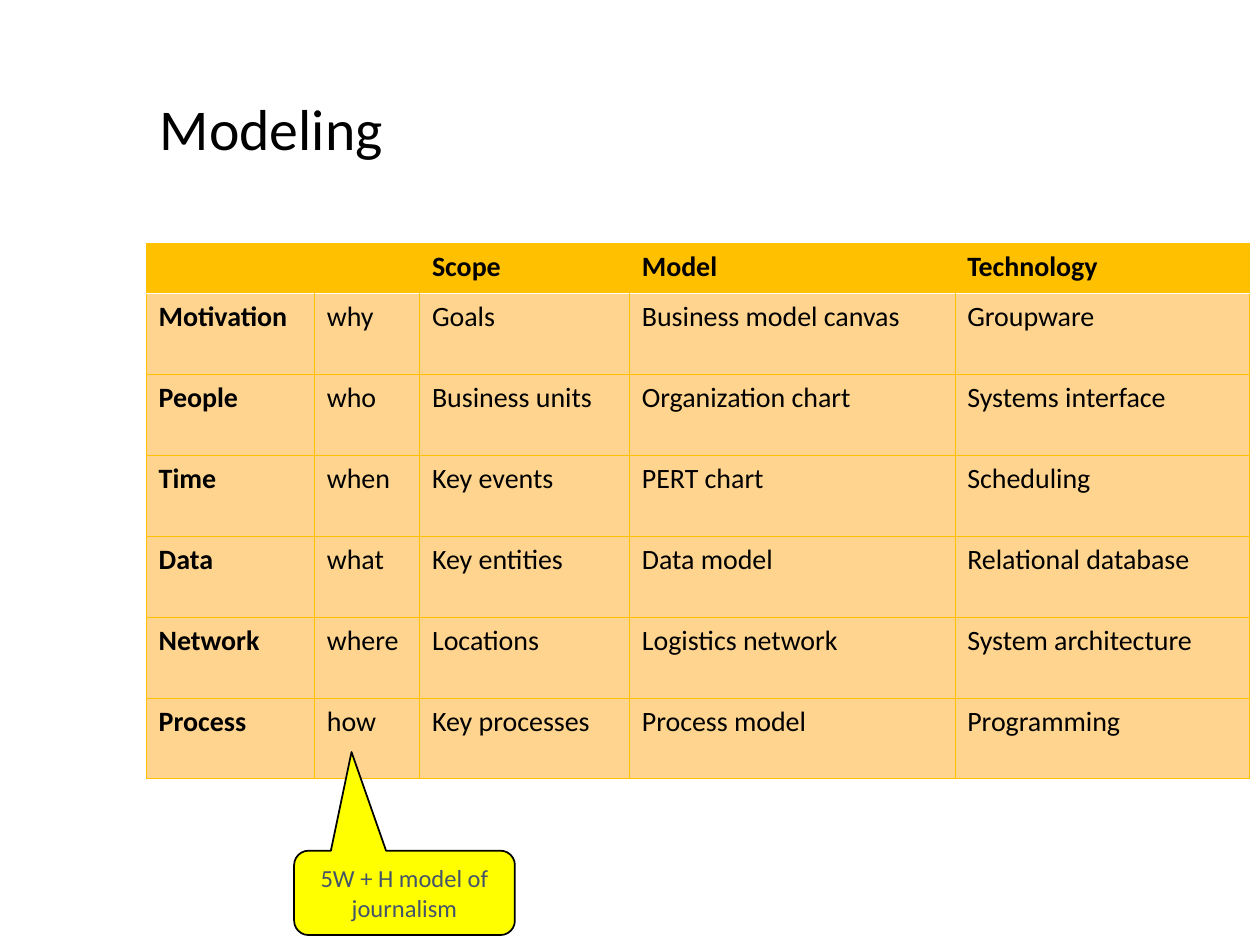
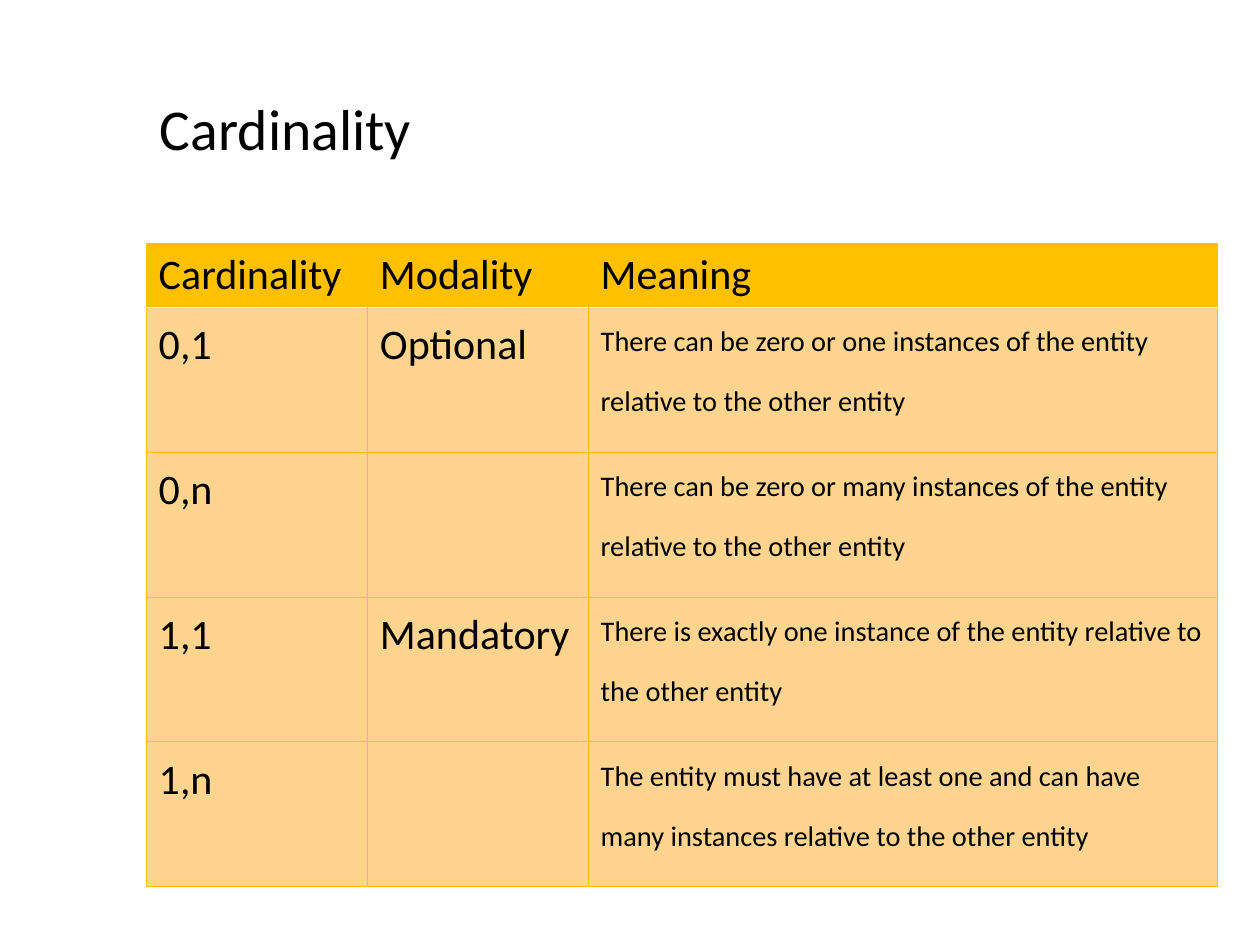
from dataclasses import dataclass

from lxml import etree
from pptx import Presentation
from pptx import util as u
from pptx.dml import color
from pptx.enum import shapes, text
from pptx.oxml import ns


@dataclass(frozen=True)
class Theme:
    font: str = "Calibri"
    ink: str = "000000"
    note_ink: str = "44546A"
    paper: str = "FFFFFF"
    accent: str = "FFC000"
    body: str = "FFD48F"
    note: str = "FFFF00"
    title_size: float = 33
    small_size: float = 14
    text_size: float = 16
    large_size: float = 24
    raised_size: float = 28
    thin: float = 0.5
    thick: float = 1


THEME = Theme()


@dataclass(frozen=True)
class TextStyle:
    size: float
    bold: bool = False
    raise_percent: int = 0
    ink: str = THEME.ink


@dataclass(frozen=True)
class Column:
    width: float
    style: TextStyle


@dataclass(frozen=True)
class Grid:
    title: str
    columns: tuple[Column, ...]
    header_style: TextStyle
    header_height: float
    row_height: float
    body_margin: float
    rows: tuple[tuple[str, ...], ...]


PLAIN = TextStyle(THEME.text_size)
STRONG = TextStyle(THEME.text_size, bold=True)
LARGE = TextStyle(THEME.large_size)
RAISED = TextStyle(THEME.raised_size, raise_percent=30)
NOTE = TextStyle(THEME.small_size, ink=THEME.note_ink)

MODELING = Grid(
    "Modeling",
    (Column(3.39, STRONG), Column(2.12, PLAIN), Column(4.23, PLAIN),
     Column(6.56, PLAIN), Column(5.94, PLAIN)),
    STRONG, 1.02, 1.63, 0.13,
    (
        ("", "", "Scope", "Model", "Technology"),
        ("Motivation", "why", "Goals", "Business model canvas", "Groupware"),
        ("People", "who", "Business units", "Organization chart", "Systems interface"),
        ("Time", "when", "Key events", "PERT chart", "Scheduling"),
        ("Data", "what", "Key entities", "Data model", "Relational database"),
        ("Network", "where", "Locations", "Logistics network", "System architecture"),
        ("Process", "how", "Key processes", "Process model", "Programming"),
    ),
)

CARDINALITY = Grid(
    "Cardinality",
    (Column(4.46, LARGE), Column(4.45, LARGE), Column(12.68, RAISED)),
    LARGE, 1.29, 2.92, 0.25,
    (
        ("Cardinality", "Modality", "Meaning"),
        ("0,1", "Optional",
         "There can be zero or one instances of the entity relative to the other entity"),
        ("0,n", "",
         "There can be zero or many instances of the entity relative to the other entity"),
        ("1,1", "Mandatory",
         "There is exactly one instance of the entity relative to the other entity"),
        ("1,n", "",
         "The entity must have at least one and can have many instances relative to the other entity"),
    ),
)


def rgb(value: str) -> color.RGBColor:
    return color.RGBColor.from_string(value)


def write(frame, content: str, style: TextStyle):
    paragraph = frame.paragraphs[0]
    paragraph.font.name = THEME.font
    paragraph.font.size = u.Pt(style.size)
    paragraph.font.bold = style.bold
    paragraph.font.color.rgb = rgb(style.ink)
    if content:
        run = paragraph.add_run()
        run.text = content
        if style.raise_percent:
            run.font._element.set("baseline", str(style.raise_percent * 1000))
    return paragraph


def add_border(cell, side: str, ink: str | None, width: float) -> None:
    properties = cell._tc.get_or_add_tcPr()
    line = etree.SubElement(properties, ns.qn(f"a:ln{side}"), w=str(int(u.Pt(width))))
    if ink is None:
        etree.SubElement(line, ns.qn("a:noFill"))
    else:
        fill = etree.SubElement(line, ns.qn("a:solidFill"))
        etree.SubElement(fill, ns.qn("a:srgbClr"), val=ink)


def frame_cell(cell, row: int, column: int, last_column: int) -> None:
    header = row == 0
    left = None if header and column > 0 else THEME.accent
    right = None if header and column < last_column else THEME.accent
    white_edge = (THEME.paper, THEME.thick)
    gold_edge = (THEME.accent, THEME.thin)
    add_border(cell, "L", left, THEME.thin)
    add_border(cell, "R", right, THEME.thin)
    add_border(cell, "T", *(white_edge if row == 1 else gold_edge))
    add_border(cell, "B", *(white_edge if header else gold_edge))


def add_title(slide, content: str) -> None:
    title = slide.shapes.title
    title.left, title.top = u.Cm(2.97), u.Cm(1.07)
    title.width, title.height = u.Cm(21.59), u.Cm(3.18)
    frame = title.text_frame
    frame.auto_size = text.MSO_AUTO_SIZE.NONE
    frame.vertical_anchor = text.MSO_ANCHOR.MIDDLE
    paragraph = write(frame, content, TextStyle(THEME.title_size))
    paragraph.alignment = text.PP_ALIGN.LEFT
    paragraph.line_spacing = 0.9


def add_grid(slide, grid: Grid) -> None:
    heights = [grid.header_height] + [grid.row_height] * (len(grid.rows) - 1)
    widths = [column.width for column in grid.columns]
    table = slide.shapes.add_table(
        len(heights), len(widths), u.Cm(2.95), u.Cm(4.9),
        u.Cm(sum(widths)), u.Cm(sum(heights)),
    ).table
    table.first_row = table.horz_banding = False
    for table_column, width in zip(table.columns, widths):
        table_column.width = u.Cm(width)
    for row, (contents, height) in enumerate(zip(grid.rows, heights)):
        table.rows[row].height = u.Cm(height)
        for column, content in enumerate(contents):
            cell = table.cell(row, column)
            frame_cell(cell, row, column, len(widths) - 1)
            cell.fill.solid()
            cell.fill.fore_color.rgb = rgb(THEME.body if row else THEME.accent)
            cell.margin_left = cell.margin_right = u.Cm(0.25)
            cell.margin_top = cell.margin_bottom = u.Cm(grid.body_margin if row else 0.13)
            style = grid.columns[column].style if row else grid.header_style
            write(cell.text_frame, content, style)


def add_callout(slide, content: str) -> None:
    shape = slide.shapes.add_shape(
        shapes.MSO_SHAPE.ROUNDED_RECTANGULAR_CALLOUT,
        u.Cm(5.93), u.Cm(17.15), u.Cm(4.45), u.Cm(1.7),
    )
    for index, value in enumerate((-0.24, -1.67, 0.17)):
        shape.adjustments[index] = value
    shape.shadow.inherit = False
    shape.fill.solid()
    shape.fill.fore_color.rgb = rgb(THEME.note)
    shape.line.color.rgb = rgb(THEME.ink)
    shape.line.width = u.Pt(THEME.thick)
    shape.text_frame.word_wrap = True
    paragraph = write(shape.text_frame, content, NOTE)
    paragraph.alignment = text.PP_ALIGN.CENTER


def add_grid_slide(presentation, grid: Grid):
    slide = presentation.slides.add_slide(presentation.slide_layouts.get_by_name("Title Only"))
    add_title(slide, grid.title)
    add_grid(slide, grid)
    return slide


def main() -> None:
    presentation = Presentation()
    presentation.slide_width, presentation.slide_height = u.Cm(25.4), u.Cm(19.05)
    modeling = add_grid_slide(presentation, MODELING)
    add_callout(modeling, "5W + H model of journalism")
    add_grid_slide(presentation, CARDINALITY)
    presentation.save("out.pptx")


if __name__ == "__main__":
    main()
